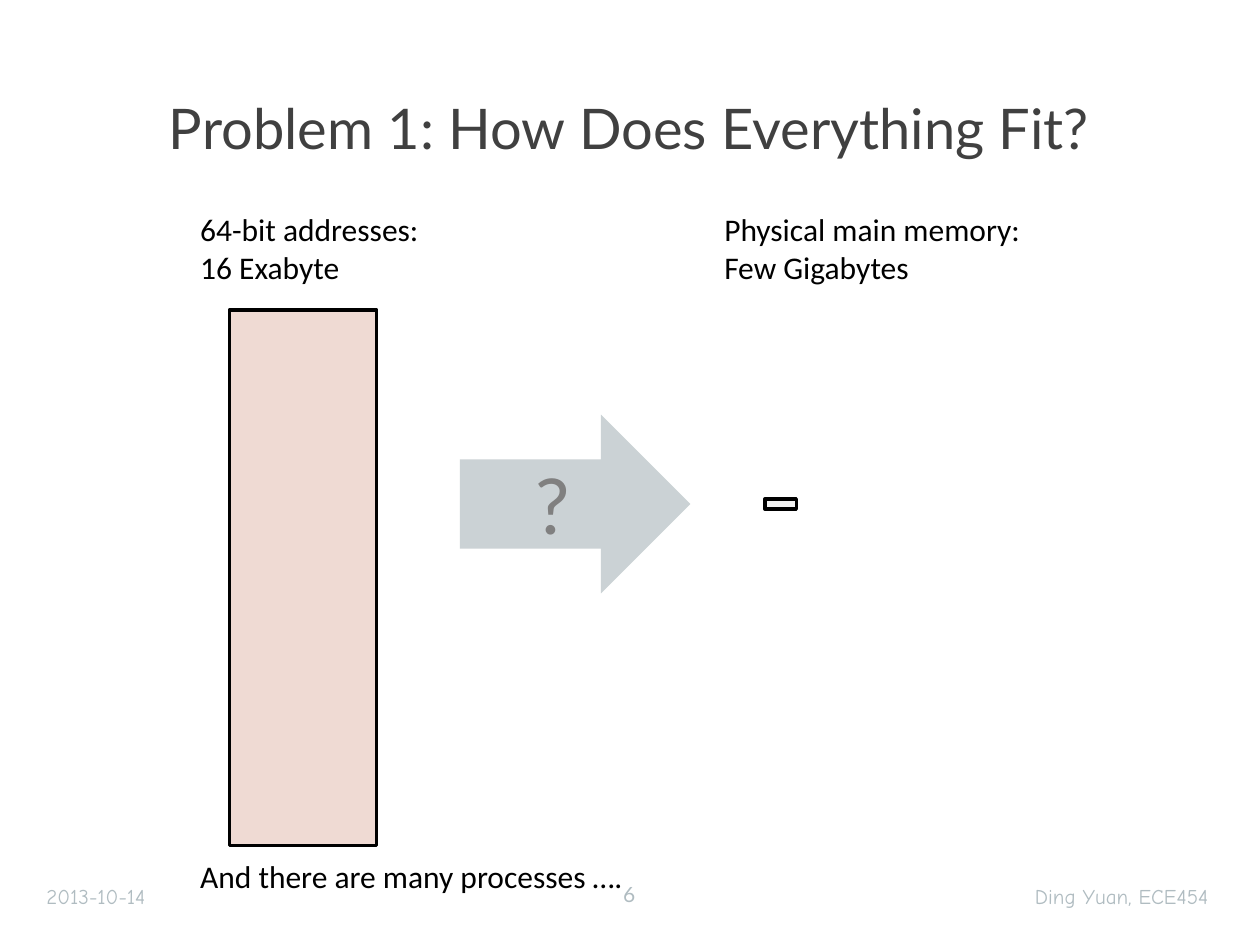
from dataclasses import dataclass

from pptx import Presentation
from pptx.dml.color import RGBColor
from pptx.enum.shapes import MSO_SHAPE
from pptx.enum.text import MSO_ANCHOR, PP_ALIGN
from pptx.util import Inches, Pt

RECTANGLE, RIGHT_ARROW = MSO_SHAPE.RECTANGLE, MSO_SHAPE.RIGHT_ARROW
TOP, MIDDLE = MSO_ANCHOR.TOP, MSO_ANCHOR.MIDDLE
LEFT, CENTER, RIGHT = PP_ALIGN.LEFT, PP_ALIGN.CENTER, PP_ALIGN.RIGHT

BLACK = RGBColor(0x00, 0x00, 0x00)
TITLE_GRAY = RGBColor(0x40, 0x40, 0x40)
QUESTION_GRAY = RGBColor(0x80, 0x80, 0x80)
FOOTER_GRAY = RGBColor(0xB0, 0xBC, 0xC1)
ARROW_GRAY = RGBColor(0xCB, 0xD2, 0xD5)
VIRTUAL_PINK = RGBColor(0xEF, 0xDA, 0xD3)
PHYSICAL_GRAY = RGBColor(0xF2, 0xF2, 0xF2)

# Shared layout lines, in inches
VIRTUAL_LEFT = 1.49
PHYSICAL_LEFT = 5.65
HEADING_TOP = 1.62
FOOTER_TOP = 6.97


@dataclass(frozen=True)
class Box:
    left: float
    top: float
    width: float
    height: float

    def emu(self) -> tuple:
        return tuple(Inches(v) for v in (self.left, self.top, self.width, self.height))


@dataclass(frozen=True)
class Style:
    font: str
    size: int
    color: RGBColor
    align: PP_ALIGN = LEFT
    anchor: MSO_ANCHOR = MIDDLE


@dataclass(frozen=True)
class Label:
    box: Box
    lines: tuple
    style: Style
    wrap: bool = True


@dataclass(frozen=True)
class Memory:
    box: Box
    fill: RGBColor


TITLE = Style("Lato", 32, TITLE_GRAY, CENTER)
BODY = Style("Calibri", 18, BLACK, anchor=TOP)
QUESTION = Style("Lato", 44, QUESTION_GRAY, CENTER)
DATE = Style("Comic Neue", 12, FOOTER_GRAY)
AUTHOR = Style("Comic Neue", 12, FOOTER_GRAY, RIGHT)
PAGE = Style("Lato", 12, FOOTER_GRAY, CENTER)

LABELS = (
    Label(Box(0.98, 0.27, 8.03, 1.47), ("Problem 1: How Does Everything Fit?",), TITLE),
    Label(Box(VIRTUAL_LEFT, HEADING_TOP, 1.98, 0.65),
          ("64-bit addresses:", "16 Exabyte"), BODY, wrap=False),
    Label(Box(PHYSICAL_LEFT, HEADING_TOP, 2.63, 0.65),
          ("Physical main memory:", "Few Gigabytes"), BODY, wrap=False),
    Label(Box(VIRTUAL_LEFT, 6.75, 3.65, 0.3),
          ("And there are many processes ….",), BODY, wrap=False),
    Label(Box(0.27, FOOTER_TOP, 2.33, 0.28), ("2013-10-14",), DATE),
    Label(Box(6.52, FOOTER_TOP, 3.17, 0.28), ("Ding Yuan, ECE454",), AUTHOR),
    Label(Box(4.58, 6.95, 0.83, 0.3), ("6",), PAGE),
)

MEMORIES = (
    Memory(Box(1.82, 2.46, 1.17, 4.25), VIRTUAL_PINK),
    Memory(Box(6.07, 3.96, 0.25, 0.08), PHYSICAL_GRAY),
)


def write_lines(frame, lines: tuple, style: Style) -> None:
    frame.vertical_anchor = style.anchor
    for index, line in enumerate(lines):
        paragraph = frame.add_paragraph() if index else frame.paragraphs[0]
        paragraph.alignment = style.align
        run = paragraph.add_run()
        run.text = line
        run.font.name = style.font
        run.font.size = Pt(style.size)
        run.font.color.rgb = style.color


def add_label(slide, label: Label) -> None:
    frame = slide.shapes.add_textbox(*label.box.emu()).text_frame
    frame.word_wrap = label.wrap
    write_lines(frame, label.lines, label.style)


def add_filled(slide, kind: MSO_SHAPE, box: Box, fill: RGBColor):
    shape = slide.shapes.add_shape(kind, *box.emu())
    shape.shadow.inherit = False
    shape.fill.solid()
    shape.fill.fore_color.rgb = fill
    return shape


def add_memory(slide, memory: Memory) -> None:
    block = add_filled(slide, RECTANGLE, memory.box, memory.fill)
    block.line.color.rgb = BLACK
    block.line.width = Pt(2)


def add_question_arrow(slide) -> None:
    arrow = add_filled(slide, RIGHT_ARROW, Box(3.65, 3.29, 1.83, 1.42), ARROW_GRAY)
    arrow.line.fill.background()
    write_lines(arrow.text_frame, ("?",), QUESTION)


def main() -> None:
    deck = Presentation()
    deck.slide_width, deck.slide_height = Inches(10), Inches(7.5)
    slide = deck.slides.add_slide(deck.slide_layouts[6])

    # Address space and physical memory, with the open question between them
    for memory in MEMORIES:
        add_memory(slide, memory)
    add_question_arrow(slide)

    # Title, headings and footer
    for label in LABELS:
        add_label(slide, label)

    deck.save("out.pptx")


if __name__ == "__main__":
    main()
